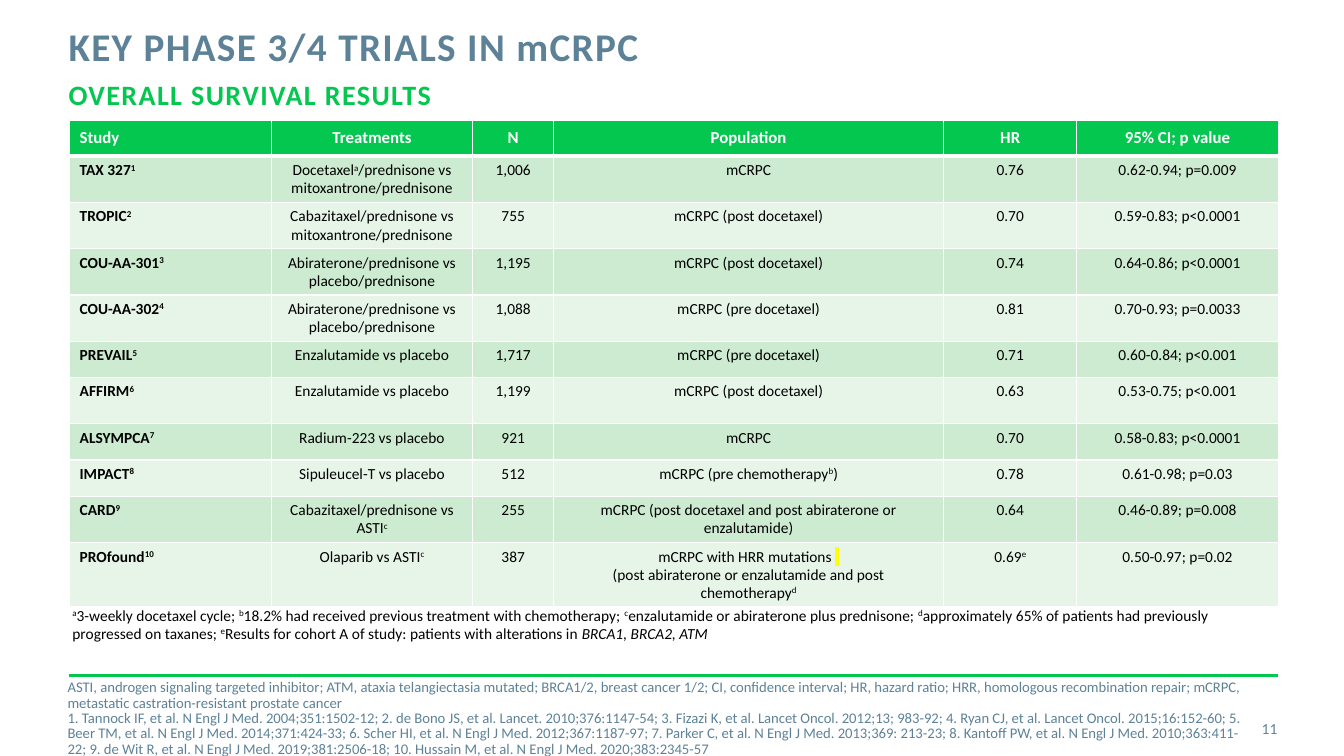
import pptx
import pptx.util
import pptx.dml.color
import pptx.enum.shapes
import pptx.enum.text
import pptx.oxml.ns
from lxml import etree

Inches, Pt = pptx.util.Inches, pptx.util.Pt
qn = pptx.oxml.ns.qn
ALIGN, ANCHOR = pptx.enum.text.PP_ALIGN, pptx.enum.text.MSO_ANCHOR

COLORS = {"green": "03C74F", "slate": "5D8298", "white": "FFFFFF", "black": "000000",
          "band_dark": "CCEBD0", "band_light": "E7F5E9", "highlight": "FFFF00"}
FONT = "Calibri"

# Text is a list of plain strings and (text, style) pairs; "\n" is a line break.
TITLE = ["KEY PHASE 3/4 TRIALS IN mCRPC"]
SUBTITLE = ["OVERALL SURVIVAL RESULTS"]
PAGE_NUMBER = ["11"]
HEADINGS = ["Study", "Treatments", "N", "Population", "HR", "95% CI; p value"]
COLUMN_WIDTHS = [2, 2, 0.8, 3.87, 1.32, 2]
HEADER_HEIGHT = 0.36

# Row height, study, treatments, N, population, HR, CI; the reference number is the row number.
TRIALS = [
    (0.44, "TAX 327", ["Docetaxel", ("a", "sup"), "/prednisone vs mitoxantrone/prednisone"],
     "1,006", ["mCRPC"], ["0.76"], "0.62-0.94; p=0.009"),
    (0.36, "TROPIC", ["Cabazitaxel/prednisone vs mitoxantrone/prednisone"],
     "755", ["mCRPC (post docetaxel)"], ["0.70"], "0.59-0.83; p<0.0001"),
    (0.44, "COU-AA-301", ["Abiraterone/prednisone vs placebo/prednisone"],
     "1,195", ["mCRPC (post docetaxel)"], ["0.74"], "0.64-0.86; p<0.0001"),
    (0.44, "COU-AA-302", ["Abiraterone/prednisone vs placebo/prednisone"],
     "1,088", ["mCRPC (pre docetaxel)"], ["0.81"], "0.70-0.93; p=0.0033"),
    (0.36, "PREVAIL", ["Enzalutamide vs placebo"],
     "1,717", ["mCRPC (pre docetaxel)"], ["0.71"], "0.60-0.84; p<0.001"),
    (0.46, "AFFIRM", ["Enzalutamide vs placebo"],
     "1,199", ["mCRPC (post docetaxel)"], ["0.63"], "0.53-0.75; p<0.001"),
    (0.36, "ALSYMPCA", ["Radium-223 vs placebo"],
     "921", ["mCRPC"], ["0.70"], "0.58-0.83; p<0.0001"),
    (0.36, "IMPACT", ["Sipuleucel-T vs placebo"],
     "512", ["mCRPC (pre chemotherapy", ("b", "sup"), ")"], ["0.78"], "0.61-0.98; p=0.03"),
    (0.36, "CARD", ["Cabazitaxel/prednisone vs ASTI", ("c", "sup")],
     "255", ["mCRPC (post docetaxel and post abiraterone or enzalutamide)"],
     ["0.64"], "0.46-0.89; p=0.008"),
    (0.54, "PROfound", ["Olaparib vs ASTI", ("c", "sup")],
     "387", ["mCRPC with HRR mutations ", (" ", "highlight"), "\n",
             "(post abiraterone or enzalutamide and post chemotherapy", ("d", "sup")],
     ["0.69", ("e", "sup")], "0.50-0.97; p=0.02"),
]
FOOTNOTES = [
    ("a", "sup"), "3-weekly docetaxel cycle; ",
    ("b", "sup"), "18.2% had received previous treatment with chemotherapy; ",
    ("c", "sup"), "enzalutamide or abiraterone plus prednisone; ",
    ("d", "sup"), "approximately 65% of patients had previously progressed on taxanes; ",
    ("e", "sup"), "Results for cohort A of study: patients with alterations in ",
    ("BRCA1, BRCA2, ATM", "italic"),
]
ABBREVIATIONS = [
    "ASTI, androgen signaling targeted inhibitor; ATM, ataxia telangiectasia mutated; "
    "BRCA1/2, breast cancer 1/2; CI, confidence interval; HR, hazard ratio; HRR, homologous "
    "recombination repair; mCRPC, metastatic castration-resistant prostate cancer"]
REFERENCES = [
    "1. Tannock IF, et al. N Engl J Med. 2004;351:1502-12; "
    "2. de Bono JS, et al. Lancet. 2010;376:1147-54; "
    "3. Fizazi K, et al. Lancet Oncol. 2012;13; 983-92; "
    "4. Ryan CJ, et al. Lancet Oncol. 2015;16:152-60; "
    "5. Beer TM, et al. N Engl J Med. 2014;371:424-33; "
    "6. Scher HI, et al. N Engl J Med. 2012;367:1187-97; "
    "7. Parker C, et al. N Engl J Med. 2013;369: 213-23; "
    "8. Kantoff PW, et al. N Engl J Med. 2010;363:411-22; "
    "9. de Wit R, et al. N Engl J Med. 2019;381:2506-18; "
    "10. Hussain M, et al. N Engl J Med. 2020;383:2345-57"]


def rgb(name):
    return pptx.dml.color.RGBColor.from_string(COLORS[name])


def add_color(parent, tag, name):
    element = etree.SubElement(parent, qn(tag))
    etree.SubElement(element, qn("a:srgbClr"), val=COLORS[name])
    return element


def write(paragraph, pieces, size, color, bold=False, align=ALIGN.LEFT,
          line_spacing=None, tracking=0):
    paragraph.alignment = align
    paragraph.space_before = Pt(0)
    if line_spacing:
        paragraph.line_spacing = line_spacing
    for piece in pieces:
        text, style = (piece, None) if isinstance(piece, str) else piece
        if text == "\n":
            paragraph.add_line_break()
            etree.SubElement(paragraph._p[-1], qn("a:rPr"), sz=str(int(size * 100)))
            continue
        run = paragraph.add_run()
        run.text = text
        run.font.name, run.font.size, run.font.bold = FONT, Pt(size), bold
        run.font.color.rgb = rgb(color)
        properties = run.font._element
        if tracking:
            properties.set("spc", str(tracking * 100))
        if style == "sup":
            properties.set("baseline", "30000")
        elif style == "italic":
            run.font.italic = True
        elif style == "highlight":
            mark = add_color(properties, "a:highlight", "highlight")
            properties.find(qn("a:solidFill")).addnext(mark)


def place(shape, left, top, width, height, anchor=ANCHOR.TOP, margin=0):
    """Position a text shape, set its frame and return the frame."""
    shape.left, shape.top = Inches(left), Inches(top)
    shape.width, shape.height = Inches(width), Inches(height)
    frame = shape.text_frame
    frame.word_wrap = True
    frame.auto_size = pptx.enum.text.MSO_AUTO_SIZE.NONE
    frame.vertical_anchor = anchor
    frame.margin_left = frame.margin_right = Inches(margin)
    frame.margin_top = frame.margin_bottom = Inches(margin / 2)
    return frame


def remove_bullet(paragraph):
    properties = paragraph._p.get_or_add_pPr()
    properties.set("marL", "0")
    properties.set("indent", "0")
    etree.SubElement(properties, qn("a:buNone"))


def style_cell(cell, fill, top, bottom):
    properties = cell._tc.get_or_add_tcPr()
    for side, width in (("L", 1), ("R", 1), ("T", top), ("B", bottom)):
        border = etree.SubElement(properties, qn("a:ln" + side), w=str(Pt(width)))
        add_color(border, "a:solidFill", "white")
    cell.fill.solid()
    cell.fill.fore_color.rgb = rgb(fill)


def add_trial_table(slide):
    heights = [HEADER_HEIGHT] + [trial[0] for trial in TRIALS]
    table = slide.shapes.add_table(
        len(heights), len(HEADINGS), Inches(0.69), Inches(1.19),
        Inches(sum(COLUMN_WIDTHS)), Inches(sum(heights))).table
    for column, width in zip(table.columns, COLUMN_WIDTHS):
        column.width = Inches(width)
    for row, height in zip(table.rows, heights):
        row.height = Inches(height)

    rows = [[[heading] for heading in HEADINGS]]
    for number, (_, study, treatments, count, population, ratio, interval) in enumerate(TRIALS, 1):
        rows.append([[study, (str(number), "sup")], treatments, [count],
                     population, ratio, [interval]])
    for r, row in enumerate(rows):
        header = r == 0
        fill = "green" if header else "band_dark" if r % 2 else "band_light"
        for c, pieces in enumerate(row):
            cell = table.cell(r, c)
            style_cell(cell, fill, top=3 if r == 1 else 1, bottom=3 if header else 1)
            cell.vertical_anchor = ANCHOR.MIDDLE if header else ANCHOR.TOP
            write(cell.text_frame.paragraphs[0], pieces, 12 if header else 11,
                  "white" if header else "black", bold=header or c == 0,
                  align=ALIGN.CENTER if c else ALIGN.LEFT, line_spacing=0.95)


def main():
    deck = pptx.Presentation()
    deck.slide_width, deck.slide_height = Inches(13.33), Inches(7.5)
    slide = deck.slides.add_slide(deck.slide_layouts.get_by_name("Two Content"))
    title, subtitle, sources = slide.placeholders

    heading = place(title, 0.68, 0.27, 9.56, 0.88)
    write(heading.paragraphs[0], TITLE, 28, "slate", bold=True,
          line_spacing=Pt(30), tracking=1)
    subheading = place(subtitle, 0.68, 0.77, 12, 0.77).paragraphs[0]
    remove_bullet(subheading)
    write(subheading, SUBTITLE, 20, "green", bold=True, tracking=1)

    add_trial_table(slide)

    footnotes = place(slide.shapes.add_textbox(0, 0, 0, 0), 0.62, 5.96, 12, 0.47, margin=0.1)
    write(footnotes.paragraphs[0], FOOTNOTES, 11, "black")

    rule = slide.shapes.add_connector(
        pptx.enum.shapes.MSO_CONNECTOR.STRAIGHT,
        Inches(0.68), Inches(6.7), Inches(12.68), Inches(6.7))
    rule.line.color.rgb = rgb("green")
    rule.line.width = Pt(2)
    etree.SubElement(rule._element.spPr, qn("a:effectLst"))

    source_frame = place(sources, 0.67, 6.69, 11.79, 0.88, ANCHOR.MIDDLE)
    source_frame.add_paragraph()
    for paragraph, pieces in zip(source_frame.paragraphs, (ABBREVIATIONS, REFERENCES)):
        remove_bullet(paragraph)
        write(paragraph, pieces, 10.5, "slate", line_spacing=Pt(11))

    page = place(slide.shapes.add_textbox(0, 0, 0, 0), 11.81, 7.03, 0.86, 0.4, ANCHOR.MIDDLE)
    write(page.paragraphs[0], PAGE_NUMBER, 11, "slate", align=ALIGN.RIGHT)

    deck.save("out.pptx")


if __name__ == "__main__":
    main()
